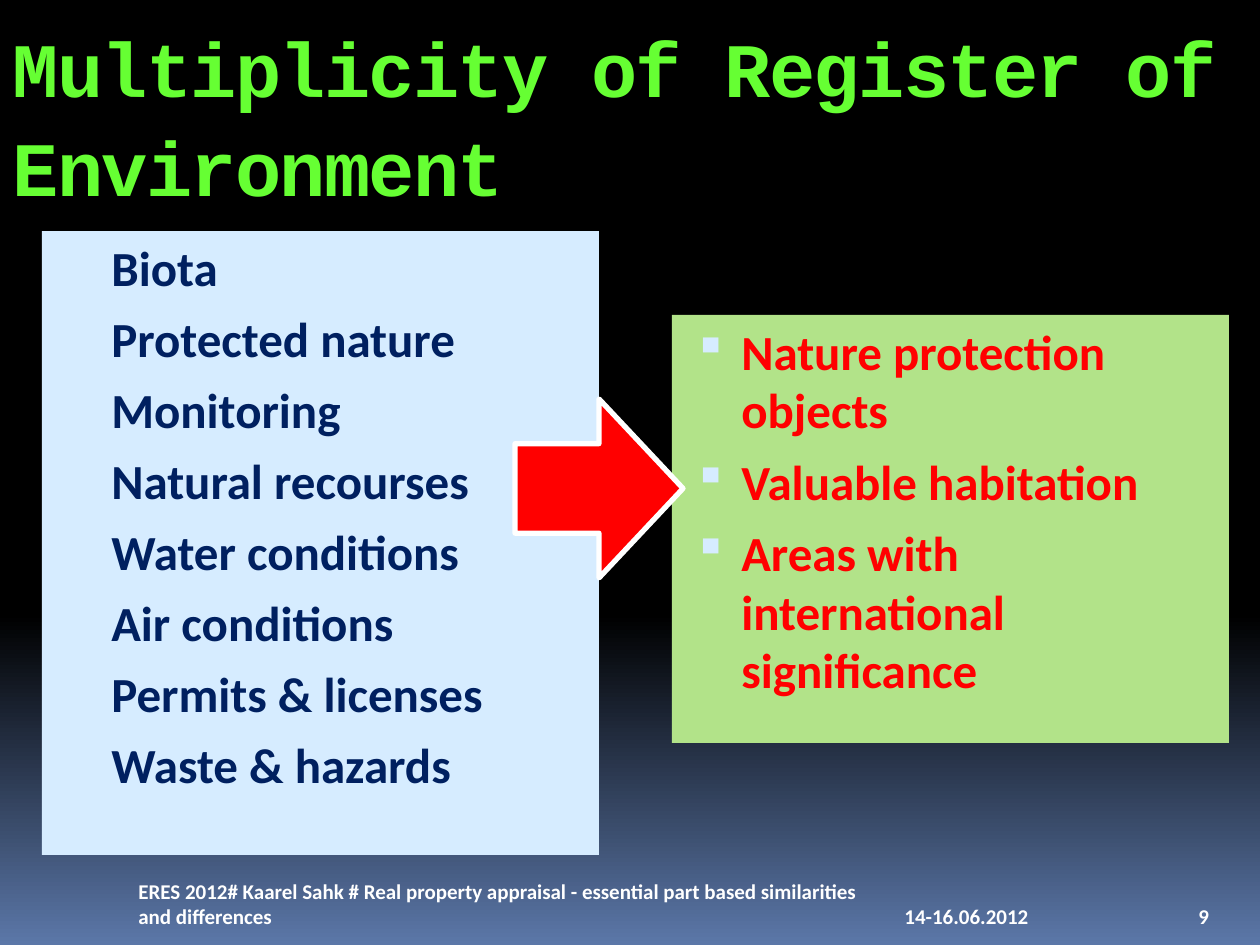
from lxml.etree import SubElement
from pptx import Presentation
from pptx.dml.color import RGBColor
from pptx.enum.shapes import MSO_SHAPE
from pptx.enum.text import MSO_ANCHOR, MSO_AUTO_SIZE, PP_ALIGN
from pptx.oxml.ns import qn
from pptx.util import Pt

SCALE = 914400 / 126
BLACK = RGBColor(0x00, 0x00, 0x00)
WHITE = RGBColor(0xFF, 0xFF, 0xFF)
STEEL = RGBColor(0x5B, 0x77, 0xA8)
LIME = RGBColor(0x66, 0xFF, 0x33)
SKY = RGBColor(0xD6, 0xEC, 0xFF)
NAVY = RGBColor(0x00, 0x20, 0x60)
GREEN = RGBColor(0xB2, 0xE3, 0x89)
RED = RGBColor(0xFF, 0x00, 0x00)

PARTS = ["Biota", "Protected nature", "Monitoring", "Natural recourses",
         "Water conditions", "Air conditions", "Permits & licenses",
         "Waste & hazards"]
GOALS = ["Nature protection objects", "Valuable habitation",
         "Areas with international significance"]
CREDIT = ("ERES 2012# Kaarel Sahk # Real property appraisal - "
          "essential part based similarities and differences")


def px(size):
    return round(size * SCALE)


def style(para, size, color, name="Calibri"):
    font = para.font
    font.name = name
    font.size = Pt(size)
    font.bold = True
    font.color.rgb = color


def paint(slide):
    fill = slide.background.fill
    fill.gradient()
    fill.gradient_angle = 270
    stops = [(0.65, BLACK), (1, STEEL)]
    for stop, (place, color) in zip(fill.gradient_stops, stops):
        stop.position = place
        stop.color.rgb = color


def add_title(slide, left, top, width, height):
    title = slide.shapes.title
    title.left, title.top = px(left), px(top)
    title.width, title.height = px(width), px(height)
    frame = title.text_frame
    frame.auto_size = MSO_AUTO_SIZE.NONE
    frame.vertical_anchor = MSO_ANCHOR.TOP
    frame.margin_top = px(14)
    para = frame.paragraphs[0]
    run = para.add_run()
    run.text = "Multiplicity of Register of Environment"
    run.font._element.set("spc", "-100")
    para.alignment = PP_ALIGN.LEFT
    para.line_spacing = 1.07
    style(para, 44, LIME, "Courier New")


def add_mark(para):
    props = para._p.get_or_add_pPr()
    props.set("marL", str(px(57)))
    props.set("indent", str(-px(48)))
    tint = SubElement(props, qn("a:buClr"))
    SubElement(tint, qn("a:srgbClr"), val=str(SKY))
    SubElement(props, qn("a:buSzPct"), val="95000")
    SubElement(props, qn("a:buChar"), char="▪")


def add_shape(slide, kind, box, color):
    shape = slide.shapes.add_shape(kind, *map(px, box))
    shape.shadow.inherit = False
    shape.fill.solid()
    shape.fill.fore_color.rgb = color
    return shape


def add_list(slide, box, items, back, ink):
    panel = add_shape(slide, MSO_SHAPE.RECTANGLE, box, back)
    panel.line.fill.background()
    frame = panel.text_frame
    frame.word_wrap = True
    frame.vertical_anchor = MSO_ANCHOR.TOP
    frame.text = "\n".join(items)
    for para in frame.paragraphs:
        para.alignment = PP_ALIGN.LEFT
        para.space_before = Pt(7)
        add_mark(para)
        style(para, 28, ink)


def add_arrow(slide, box):
    arrow = add_shape(slide, MSO_SHAPE.RIGHT_ARROW, box, RED)
    arrow.line.color.rgb = WHITE
    arrow.line.width = Pt(3)


def add_foot(slide, left, top, height):
    cells = [(0, 766, CREDIT), (766, 294, "14-16.06.2012"), (1060, 63, "9")]
    for start, width, text in cells:
        box = slide.shapes.add_textbox(
            px(left + start), px(top), px(width), px(height))
        frame = box.text_frame
        frame.word_wrap = True
        frame.vertical_anchor = MSO_ANCHOR.BOTTOM
        frame.text = text
        style(frame.paragraphs[0], 12, WHITE)


def main():
    deck = Presentation()
    deck.slide_width, deck.slide_height = px(1260), px(945)
    slide = deck.slides.add_slide(deck.slide_layouts[5])
    paint(slide)
    add_title(slide, 0, 0, 1260, 126)
    add_list(slide, (42, 231, 557, 624), PARTS, SKY, NAVY)
    add_list(slide, (672, 315, 557, 428), GOALS, GREEN, RED)
    add_foot(slide, 126, 885, 50)
    add_arrow(slide, (515, 399, 168, 179))
    deck.save("out.pptx")


if __name__ == "__main__":
    main()
